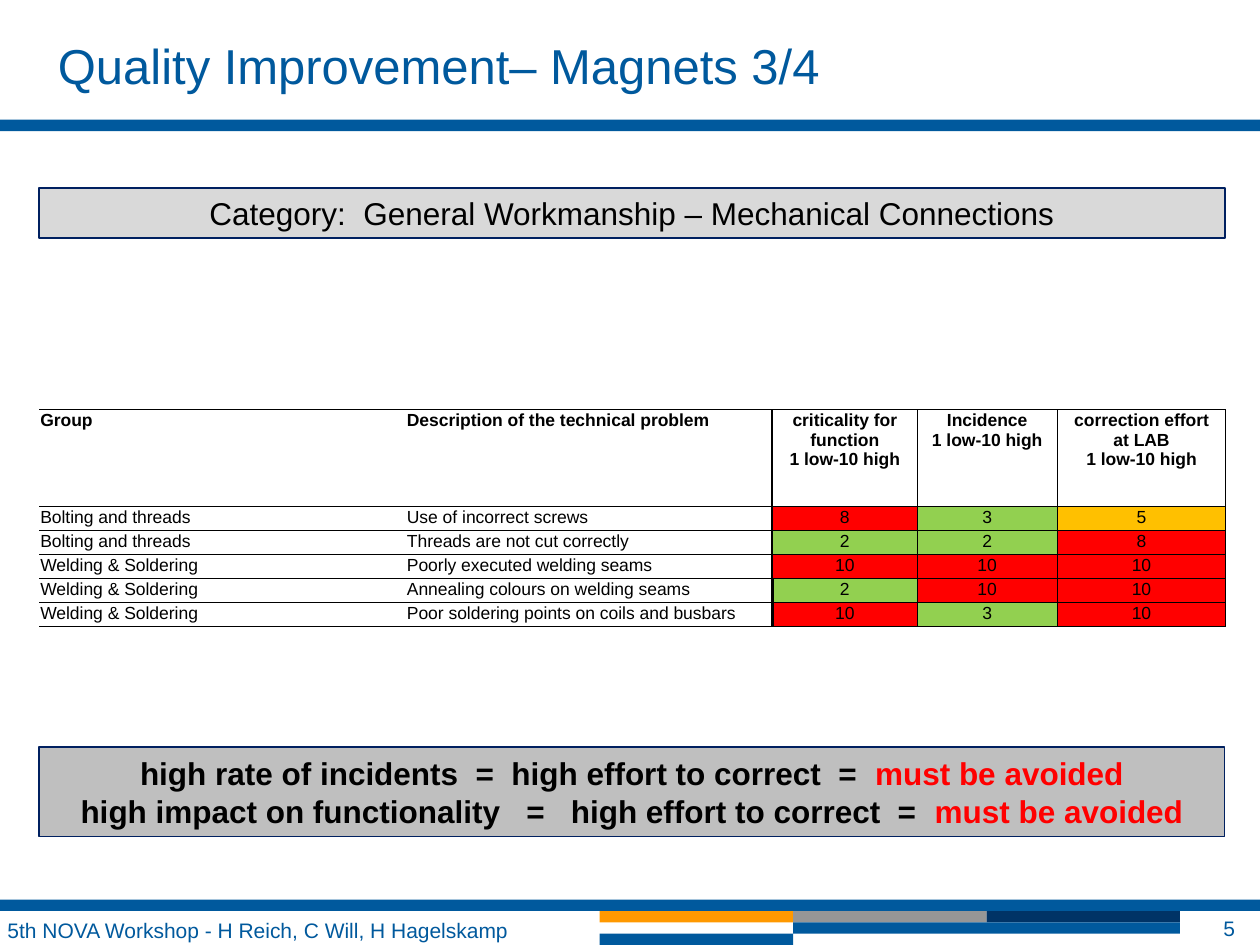
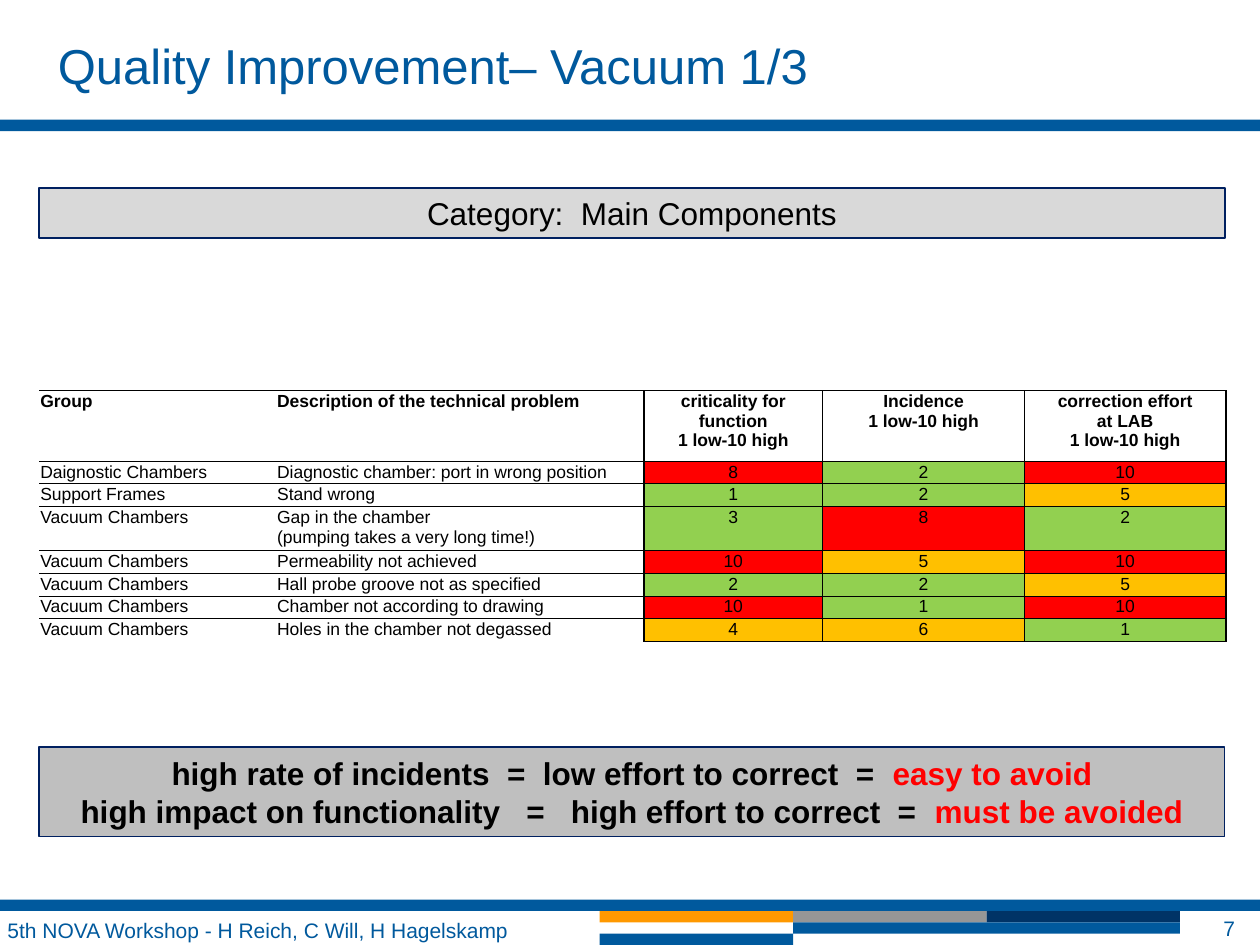
from dataclasses import dataclass

from lxml import etree
from pptx import Presentation
from pptx import util as u
from pptx.dml.color import RGBColor
from pptx.enum import shapes, text
from pptx.oxml.ns import qn


@dataclass(frozen=True)
class Theme:
    font: str = "Arial"
    blue: str = "00599D"
    navy: str = "003366"
    outline: str = "002060"
    orange: str = "FF9900"
    grey: str = "969696"
    category: str = "D9D9D9"
    conclusion: str = "BFBFBF"
    ink: str = "000000"
    red: str = "FF0000"
    amber: str = "FFC000"
    green: str = "92D050"
    title_size: int = 28
    box_size: int = 18
    footer_size: int = 12
    table_size: int = 10


@dataclass(frozen=True)
class RatingTable:
    top: float
    columns: tuple
    header_height: float
    row_height: float
    verticals: tuple
    header_rule: float
    rows: tuple
    tall_rows: tuple = ()
    heavy_rows: tuple = ()
    closed: bool = True


THEME = Theme()
LEFT, WIDTH = 0.31, 9.41
BAND = 0.09
HAIRLINE = 0.5
TALL_ROW = 0.35
FIRST_RATING = 2
FOOTER = "5th NOVA Workshop - H Reich, C Will, H Hagelskamp"
HEADERS = (
    "Group",
    "Description of the technical problem",
    "criticality for function\n1 low-10 high",
    "Incidence\n1 low-10 high",
    "correction effort\nat LAB\n1 low-10 high",
)

MAGNETS = RatingTable(
    top=3.25,
    columns=(2.91, 2.91, 1.15, 1.11, 1.34),
    header_height=0.77,
    row_height=0.19,
    verticals=(0, 0, 1.5, 0.5, 0.5, 0.5),
    header_rule=1,
    heavy_rows=(4, 5),
    rows=(
        ("Bolting and threads", "Use of incorrect screws", 8, 3, 5),
        ("Bolting and threads", "Threads are not cut correctly", 2, 2, 8),
        ("Welding & Soldering", "Poorly executed welding seams", 10, 10, 10),
        ("Welding & Soldering", "Annealing colours on welding seams", 2, 10, 10),
        ("Welding & Soldering", "Poor soldering points on coils and busbars", 10, 3, 10),
    ),
)

VACUUM = RatingTable(
    top=3.1,
    columns=(1.88, 2.92, 1.42, 1.6, 1.6),
    header_height=0.56,
    row_height=0.18,
    verticals=(0, 0, 1, 1, 1, 1),
    header_rule=0.5,
    tall_rows=(3,),
    closed=False,
    rows=(
        ("Daignostic Chambers", "Diagnostic chamber: port in wrong position", 8, 2, 10),
        ("Support Frames", "Stand wrong", 1, 2, 5),
        ("Vacuum Chambers", "Gap in the chamber\n(pumping takes a very long time!)", 3, 8, 2),
        ("Vacuum Chambers", "Permeability not achieved", 10, 5, 10),
        ("Vacuum Chambers", "Hall probe groove not as specified", 2, 2, 5),
        ("Vacuum Chambers", "Chamber not according to drawing", 10, 1, 10),
        ("Vacuum Chambers", "Holes in the chamber not degassed", 4, 6, 1),
    ),
)

IMPACT = ("high impact on functionality   =   high effort to correct  =  ", "must be avoided")
PAGES = (
    (5, "Quality Improvement– Magnets 3/4",
     "Category:  General Workmanship – Mechanical Connections", MAGNETS,
     (("high rate of incidents  =  high effort to correct  =  ", "must be avoided"), IMPACT)),
    (7, "Quality Improvement– Vacuum 1/3",
     "Category:  Main Components", VACUUM,
     (("high rate of incidents  =  low effort to correct  =  ", "easy to avoid"), IMPACT)),
)


def rgb(value):
    return RGBColor.from_string(value)


def inches(*lengths):
    return [u.Inches(length) for length in lengths]


def set_margins(target, *lengths):
    (target.margin_left, target.margin_top,
     target.margin_right, target.margin_bottom) = inches(*lengths)


def style(para, size, color, bold=False, align=text.PP_ALIGN.LEFT):
    para.alignment = align
    for font in (para.font, *(span.font for span in para.runs)):
        font.name = THEME.font
        font.size = u.Pt(size)
        font.bold = bold
        font.color.rgb = rgb(color)


def add_rectangle(page, place, fill, outline=None, weight=1):
    box = page.shapes.add_shape(shapes.MSO_SHAPE.RECTANGLE, *inches(*place))
    box.shadow.inherit = False
    box.fill.solid()
    box.fill.fore_color.rgb = rgb(fill)
    if outline:
        box.line.color.rgb = rgb(outline)
        box.line.width = u.Pt(weight)
    else:
        box.line.fill.background()
    return box


def add_master_bands(page, master):
    left, top, step = 4.76, 7.23, 1.535
    bands = [((left + i * step, top, step, BAND), color)
             for i, color in enumerate((THEME.orange, THEME.grey, THEME.navy))]
    bands += [(place, THEME.blue) for place in (
        (0, top - BAND, 10, BAND),
        (left + step, top + BAND, 2 * step, BAND),
        (left, top + 2 * BAND, step, BAND),
        (0, 0.95, 10, BAND),
    )]
    for number, (place, color) in enumerate(bands, 100):
        band = add_rectangle(page, place, color)
        band.element.nvSpPr.cNvPr.id = number
        master.shapes.element.append(band.element)


def add_title(page, place, wording):
    title = page.shapes.title
    title.left, title.top, title.width, title.height = inches(*place)
    frame = title.text_frame
    frame.text = wording
    frame.word_wrap = True
    frame.auto_size = text.MSO_AUTO_SIZE.NONE
    frame.vertical_anchor = text.MSO_ANCHOR.TOP
    set_margins(frame, 0, 0.04, 0, 0)
    style(frame.paragraphs[0], THEME.title_size, THEME.blue)


def add_category(page, place, wording):
    box = add_rectangle(page, place, THEME.category, THEME.outline, 1.25)
    frame = box.text_frame
    frame.text = wording
    frame.word_wrap = True
    frame.auto_size = text.MSO_AUTO_SIZE.SHAPE_TO_FIT_TEXT
    style(frame.paragraphs[0], THEME.box_size, THEME.ink, align=text.PP_ALIGN.CENTER)


def add_conclusion(page, place, lines):
    frame = add_rectangle(page, place, THEME.conclusion, THEME.outline).text_frame
    frame.word_wrap = True
    frame.auto_size = text.MSO_AUTO_SIZE.SHAPE_TO_FIT_TEXT
    for i, (finding, verdict) in enumerate(lines):
        para = frame.add_paragraph() if i else frame.paragraphs[0]
        para.add_run().text = finding
        span = para.add_run()
        span.text = verdict
        style(para, THEME.box_size, THEME.ink, True, text.PP_ALIGN.CENTER)
        span.font.color.rgb = rgb(THEME.red)


def rating_color(rating):
    if rating >= 8:
        return THEME.red
    return THEME.amber if rating >= 4 else THEME.green


def set_borders(cell, weights):
    properties = cell._tc.get_or_add_tcPr()
    for side, weight in zip("LRTB", weights):
        line = etree.SubElement(properties, qn(f"a:ln{side}"), w=str(u.Pt(weight)))
        if weight:
            fill = etree.SubElement(line, qn("a:solidFill"))
            etree.SubElement(fill, qn("a:srgbClr"), val=THEME.ink)
        else:
            etree.SubElement(line, qn("a:noFill"))


def border_weights(ratings, row, column):
    def vertical(index):
        heavy = index == FIRST_RATING and row in ratings.heavy_rows
        return 2 if heavy else ratings.verticals[index]

    def horizontal(index):
        if index == 1:
            return ratings.header_rule
        last = index == len(ratings.rows) + 1
        return 0 if last and not ratings.closed and column < FIRST_RATING else HAIRLINE

    return vertical(column), vertical(column + 1), horizontal(row), horizontal(row + 1)


def fill_cell(cell, value, is_header, is_rating):
    set_margins(cell, 0.01, 0.01, 0.01, 0)
    cell.vertical_anchor = text.MSO_ANCHOR.TOP
    para = cell.text_frame.paragraphs[0]
    para.text = str(value)
    align = text.PP_ALIGN.CENTER if is_rating else text.PP_ALIGN.LEFT
    style(para, THEME.table_size, THEME.ink, is_header, align)
    for line_break in para._p.findall(qn("a:br")):
        etree.SubElement(line_break, qn("a:rPr"), sz=str(THEME.table_size * 100))
    if is_rating and not is_header:
        cell.fill.solid()
        cell.fill.fore_color.rgb = rgb(rating_color(value))
    else:
        cell.fill.background()


def add_ratings(page, left, width, ratings):
    records = (HEADERS, *ratings.rows)
    heights = [ratings.header_height] + [
        TALL_ROW if row in ratings.tall_rows else ratings.row_height
        for row in range(1, len(records))]
    place = inches(left, ratings.top, width, sum(heights))
    table = page.shapes.add_table(len(records), len(HEADERS), *place).table
    table.first_row = table.horz_banding = False
    for column, length in zip(table.columns, ratings.columns):
        column.width = u.Inches(length)
    for row, height in zip(table.rows, heights):
        row.height = u.Inches(height)
    for row, record in enumerate(records):
        for column, value in enumerate(record):
            cell = table.cell(row, column)
            set_borders(cell, border_weights(ratings, row, column))
            fill_cell(cell, value, row == 0, column >= FIRST_RATING)


def add_footer(page, top, height, number):
    label = page.shapes.add_textbox(*inches(0, top, 4.76, height)).text_frame
    label.word_wrap = True
    set_margins(label, 0.06, 0.05, 0.1, 0.05)
    label.text = FOOTER
    style(label.paragraphs[0], THEME.footer_size, THEME.blue)
    counter = page.shapes.add_textbox(*inches(9.1, top, 0.8, height)).text_frame
    counter.word_wrap = True
    counter.vertical_anchor = text.MSO_ANCHOR.MIDDLE
    set_margins(counter, 0.1, 0, 0.1, 0)
    counter.text = str(number)
    style(counter.paragraphs[0], THEME.footer_size, THEME.blue, align=text.PP_ALIGN.RIGHT)


def add_quality_page(deck, number, title, category, ratings, conclusion):
    page = deck.slides.add_slide(deck.slide_layouts.get_by_name("Title Only"))
    add_title(page, (0.46, 0.24, WIDTH, 0.43), title)
    add_category(page, (LEFT, 1.49, WIDTH, 0.4), category)
    add_ratings(page, LEFT, WIDTH, ratings)
    add_conclusion(page, (LEFT, 5.93, WIDTH, 0.71), conclusion)
    add_footer(page, 7.23, 0.27, number)
    return page


def main():
    deck = Presentation()
    deck.slide_width, deck.slide_height = inches(10, 7.5)
    pages = [add_quality_page(deck, *content) for content in PAGES]
    add_master_bands(pages[0], deck.slide_master)
    deck.save("out.pptx")


if __name__ == "__main__":
    main()
